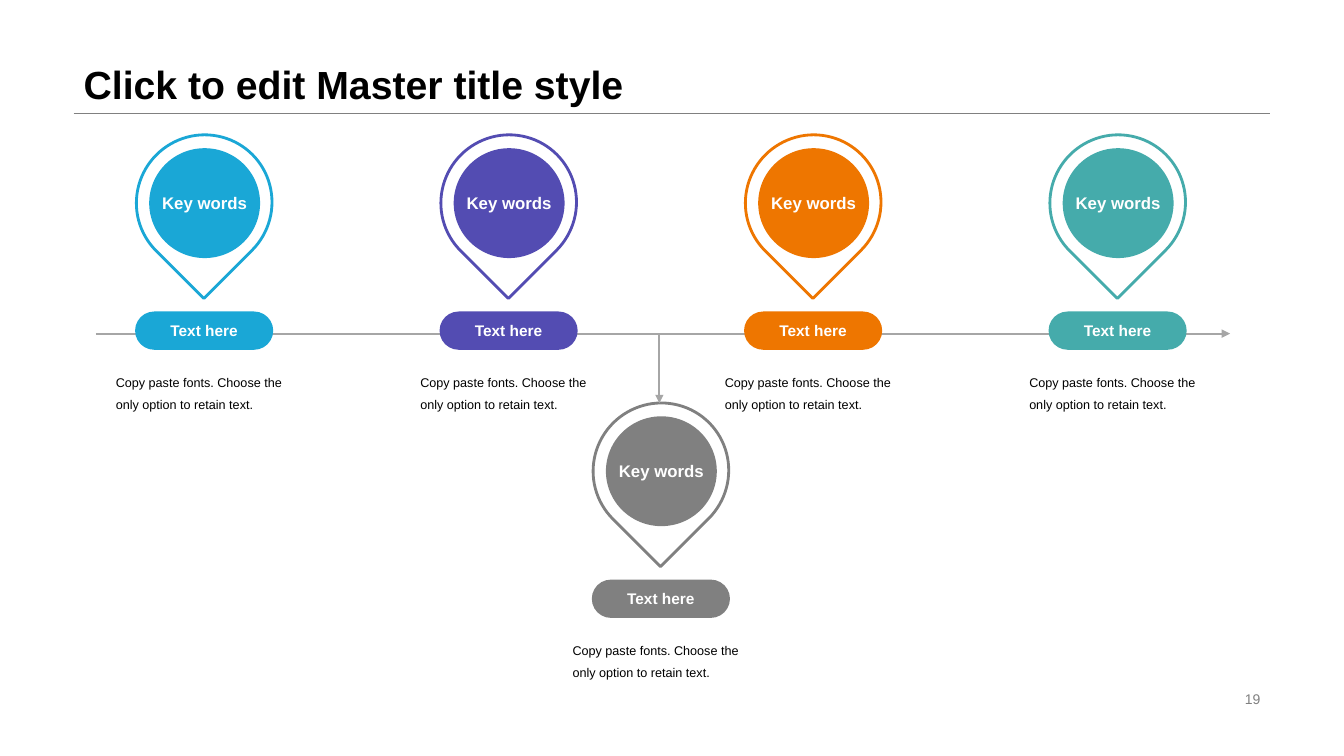
from pptx import Presentation, util as u
from pptx.dml.color import RGBColor
from pptx.enum import shapes as s, text as t
from pptx.oxml.ns import qn
from lxml import etree

GRAY, RULE, WHITE, BLACK = "808080", "A6A6A6", "FFFFFF", "000000"
HUES = ["1AA7D6", "534CB2", "EE7600", "45ABAB"]
LEFT, TOP, STEP = 1.05, 1.34, 3.02
AXIS = 3.31


def paint(item, hue):
    """Set a solid fill or a font colour."""
    if hasattr(item, "solid"):
        item.solid()
        item.fore_color.rgb = RGBColor.from_string(hue)
    else:
        item.color.rgb = RGBColor.from_string(hue)


def write(frame, words, size, hue, bold=False, align=None, space=None):
    para = frame.paragraphs[0]
    para.alignment = align
    para.line_spacing = space
    run = para.add_run()
    run.text = words
    run.font.name, run.font.size, run.font.bold = "Arial", u.Pt(size), bold
    paint(run.font, hue)


def place(box):
    return [u.Inches(n) for n in box]


def shape(slide, kind, box, fill, line=None):
    item = slide.shapes.add_shape(kind, *place(box))
    item.shadow.inherit = False
    paint(item.fill, fill)
    if line:
        paint(item.line.fill, line)
        item.line.width = u.Pt(2)
    else:
        item.line.fill.background()
    return item


def badge(slide, kind, box, hue, words, size):
    """Filled shape with a centred white label."""
    item = shape(slide, kind, box, hue)
    frame = item.text_frame
    frame.word_wrap = False
    frame.vertical_anchor = t.MSO_ANCHOR.MIDDLE
    write(frame, words, size, WHITE, True, t.PP_ALIGN.CENTER)
    return item


def rule(slide, ends, hue, width, arrow=False):
    item = slide.shapes.add_connector(s.MSO_CONNECTOR.STRAIGHT, *place(ends))
    paint(item.line.fill, hue)
    item.line.width = u.Pt(width)
    if arrow:
        tail = etree.SubElement(item.line._get_or_add_ln(), qn("a:tailEnd"))
        tail.set("type", "triangle")
    etree.SubElement(item._element.spPr, qn("a:effectLst"))


def head(slide, box):
    """Title with the rule under it."""
    x, y, w, h = box
    rule(slide, (x, y + h, x + w, y + h), GRAY, 0.25)
    title = slide.shapes.title
    title.left, title.top, title.width, title.height = place(box)
    frame = title.text_frame
    frame.auto_size = t.MSO_AUTO_SIZE.NONE
    frame.vertical_anchor = t.MSO_ANCHOR.BOTTOM
    write(frame, "Click to edit Master title style", 28, BLACK, True,
          t.PP_ALIGN.LEFT, 0.9)


def marker(slide, x, y, hue):
    """Pin, label and note, placed from the top left corner."""
    kind = s.MSO_SHAPE
    pin = shape(slide, kind.TEAR, (x + 0.3, y, 1.35, 1.34), WHITE, hue)
    pin.rotation = 135
    badge(slide, kind.OVAL, (x + 0.43, y + 0.13, 1.1, 1.09), hue,
          "Key words", 12)
    pill = badge(slide, kind.ROUNDED_RECTANGLE,
                 (x + 0.29, y + 1.75, 1.37, 0.38), hue, "Text here", 11)
    pill.adjustments[0] = 0.5
    note = slide.shapes.add_textbox(*place((x, y + 2.25, 2.09, 0.55)))
    note.text_frame.word_wrap = True
    write(note.text_frame,
          "Copy paste fonts. Choose the only option to retain text.",
          9, BLACK, space=1.5)


def foot(slide, box):
    """Slide number."""
    frame = slide.shapes.add_textbox(*place(box)).text_frame
    frame.word_wrap = True
    frame.vertical_anchor = t.MSO_ANCHOR.MIDDLE
    write(frame, "19", 10, GRAY, align=t.PP_ALIGN.RIGHT)


def main():
    deck = Presentation()
    deck.slide_width, deck.slide_height = u.Inches(13.33), u.Inches(7.5)
    slide = deck.slides.add_slide(deck.slide_layouts[5])
    head(slide, (0.73, 0, 11.87, 1.12))
    foot(slide, (9.42, 6.82, 3.18, 0.23))
    # Timeline and its four stages
    rule(slide, (0.95, AXIS, 12.2, AXIS), RULE, 1.5, True)
    for i, hue in enumerate(HUES):
        marker(slide, LEFT + i * STEP, TOP, hue)
    # Branch halfway between the second and third stage
    marker(slide, LEFT + 1.5 * STEP, 4, GRAY)
    rule(slide, (6.54, AXIS, 6.54, 4), RULE, 1.5, True)
    deck.save("out.pptx")


if __name__ == "__main__":
    main()
